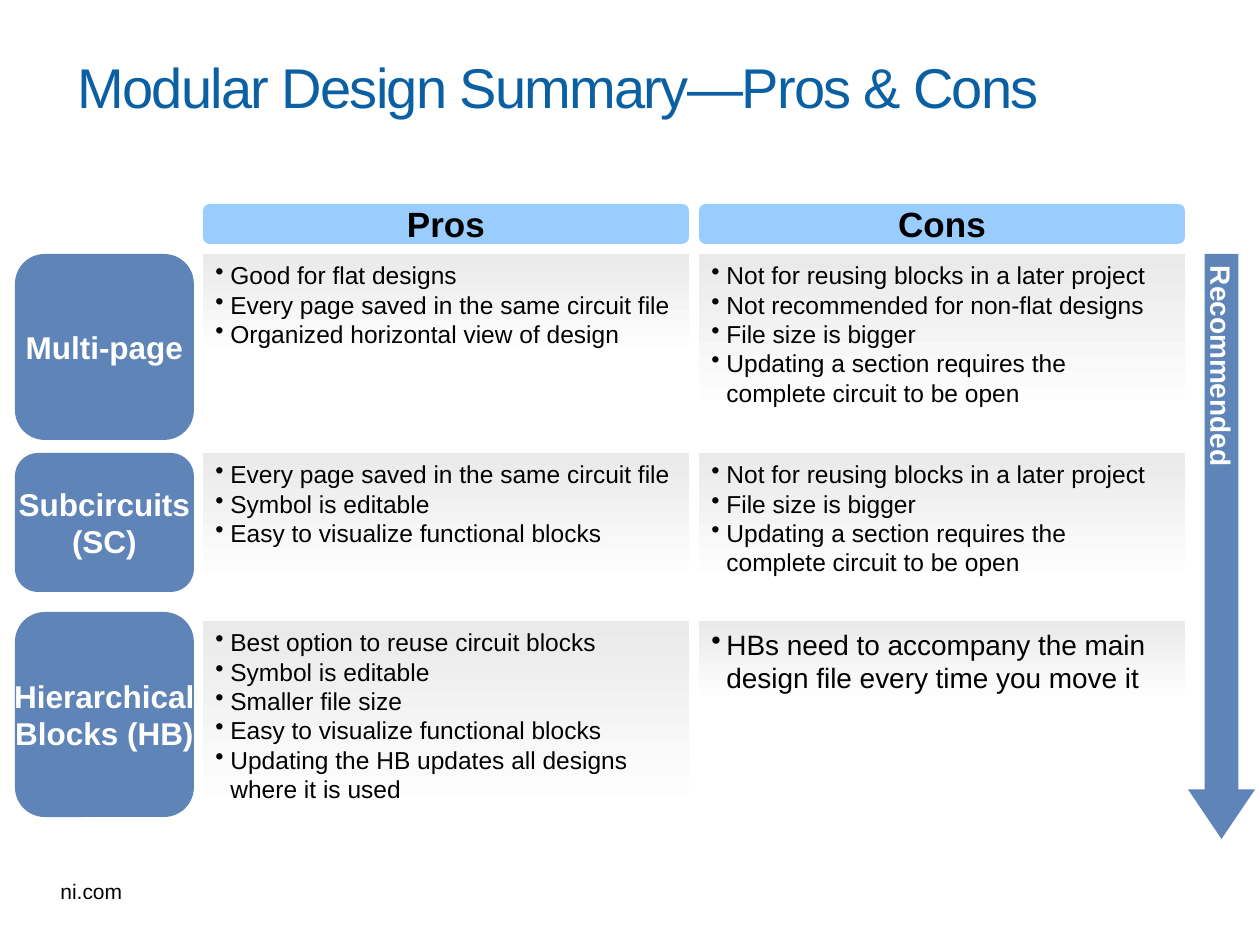
from dataclasses import dataclass

from lxml.etree import SubElement
from pptx import Presentation
from pptx.dml.color import RGBColor
from pptx.enum.shapes import MSO_SHAPE
from pptx.enum.text import MSO_ANCHOR, PP_ALIGN
from pptx.oxml.ns import qn
from pptx.util import Pt

EMU_PER_PX = 914400 / 126


@dataclass(frozen=True)
class Theme:
    font: str = "Arial"
    title: str = "0A60A3"
    accent: str = "5E84B8"
    header: str = "99CCFF"
    panel_top: str = "EAEAEA"
    white: str = "FFFFFF"
    black: str = "000000"
    title_size: int = 32
    header_size: int = 20
    tile_size: int = 18
    large_size: int = 16
    body_size: int = 14
    footer_size: int = 12


THEME = Theme()

TILE_LEFT, TILE_WIDTH = 15, 179
COLUMN_LEFT, COLUMN_WIDTH, COLUMN_PITCH = 203, 486, 496
HEADER_TOP, HEADER_HEIGHT = 204, 40
HEADERS = ["Pros", "Cons"]
BULLET_INDENT = 15

SAME_FILE = "Every page saved in the same circuit file"
NO_REUSE = "Not for reusing blocks in a later project"
BIGGER = "File size is bigger"
OPEN_CIRCUIT = "Updating a section requires the complete circuit to be open"
EDITABLE = "Symbol is editable"
VISUALIZE = "Easy to visualize functional blocks"

# Each row: tile lines, tile top and height, panel top, then (height, size, bullets) per column.
ROWS = [
    (["Multi-page"], 254, 186, 254, [
        (102, THEME.body_size,
         ["Good for flat designs", SAME_FILE, "Organized horizontal view of design"]),
        (161, THEME.body_size,
         [NO_REUSE, "Not recommended for non-flat designs", BIGGER, OPEN_CIRCUIT]),
    ]),
    (["Subcircuits", "(SC)"], 453, 139, 453, [
        (131, THEME.body_size, [SAME_FILE, EDITABLE, VISUALIZE]),
        (131, THEME.body_size, [NO_REUSE, BIGGER, OPEN_CIRCUIT]),
    ]),
    (["Hierarchical", "Blocks (HB)"], 612, 205, 621, [
        (190, THEME.body_size,
         ["Best option to reuse circuit blocks", EDITABLE, "Smaller file size", VISUALIZE,
          "Updating the HB updates all designs where it is used"]),
        (81, THEME.large_size,
         ["HBs need to accompany the main design file every time you move it"]),
    ]),
]


def px(length):
    return round(length * EMU_PER_PX)


def add_bullet(paragraph):
    properties = paragraph._p.get_or_add_pPr()
    properties.set("marL", str(px(BULLET_INDENT)))
    properties.set("indent", str(-px(BULLET_INDENT)))
    SubElement(properties, qn("a:buChar")).set("char", "•")


def write(shape, lines, size, color, bold=False, align=PP_ALIGN.LEFT,
          anchor=MSO_ANCHOR.MIDDLE, wrap=False, bullets=False):
    frame = shape.text_frame
    frame.word_wrap = wrap
    frame.vertical_anchor = anchor
    frame.text = "\n".join(lines)
    for paragraph in frame.paragraphs:
        if bullets:
            add_bullet(paragraph)
        paragraph.alignment = align
        font = paragraph.font
        font.name, font.size, font.bold = THEME.font, Pt(size), bold
        font.color.rgb = RGBColor.from_string(color)


def add_shape(slide, kind, box, fill=None):
    shape = slide.shapes.add_shape(kind, *map(px, box))
    shape.shadow.inherit = False
    shape.line.fill.background()
    if fill:
        shape.fill.solid()
        shape.fill.fore_color.rgb = RGBColor.from_string(fill)
    return shape


def add_label(slide, box, lines, size, fill, color):
    shape = add_shape(slide, MSO_SHAPE.ROUNDED_RECTANGLE, box, fill)
    write(shape, lines, size, color, bold=True, align=PP_ALIGN.CENTER)


def add_panel(slide, box, bullets, size):
    """Add a bullet list on a fill that fades downwards to white."""
    shape = add_shape(slide, MSO_SHAPE.RECTANGLE, box)
    shape.fill.gradient()
    shape.fill.gradient_angle = 270
    for stop, color in zip(shape.fill.gradient_stops, (THEME.panel_top, THEME.white)):
        stop.color.rgb = RGBColor.from_string(color)
    write(shape, bullets, size, THEME.black, anchor=MSO_ANCHOR.TOP, wrap=True, bullets=True)


def add_recommendation_arrow(slide, box, text):
    arrow = add_shape(slide, MSO_SHAPE.DOWN_ARROW, box, THEME.accent)
    arrow.adjustments[0], arrow.adjustments[1] = 0.5, 0.74
    write(arrow, [text], THEME.large_size, THEME.white, bold=True, wrap=True)
    frame = arrow.text_frame
    frame.margin_left = frame.margin_right = px(12)
    frame.margin_top = frame.margin_bottom = px(12)
    frame._txBody.bodyPr.set("vert", "eaVert")


def add_text(slide, box, text, size, color, **options):
    text_box = slide.shapes.add_textbox(*map(px, box))
    write(text_box, [text], size, color, **options)
    return text_box


def add_title(slide, text):
    title = add_text(slide, (65, 20, 1125, 132), text, THEME.title_size, THEME.title, wrap=True)
    run = title.text_frame.paragraphs[0].runs[0]
    run._r.get_or_add_rPr().set("spc", "-100")


def main():
    presentation = Presentation()
    presentation.slide_width, presentation.slide_height = px(1260), px(945)
    slide = presentation.slides.add_slide(presentation.slide_layouts[6])

    add_text(slide, (48, 872, 90, 38), "ni.com", THEME.footer_size, THEME.black,
             anchor=MSO_ANCHOR.TOP)
    add_title(slide, "Modular Design Summary—Pros & Cons")

    column_lefts = [COLUMN_LEFT + i * COLUMN_PITCH for i in range(len(HEADERS))]
    for left, header in zip(column_lefts, HEADERS):
        add_label(slide, (left, HEADER_TOP, COLUMN_WIDTH, HEADER_HEIGHT), [header],
                  THEME.header_size, THEME.header, THEME.black)

    for lines, tile_top, tile_height, panel_top, panels in ROWS:
        add_label(slide, (TILE_LEFT, tile_top, TILE_WIDTH, tile_height), lines,
                  THEME.tile_size, THEME.accent, THEME.white)
        for left, (height, size, bullets) in zip(column_lefts, panels):
            add_panel(slide, (left, panel_top, COLUMN_WIDTH, height), bullets, size)

    add_recommendation_arrow(slide, (1188, 254, 67, 585), "Recommended")
    presentation.save("out.pptx")


if __name__ == "__main__":
    main()
